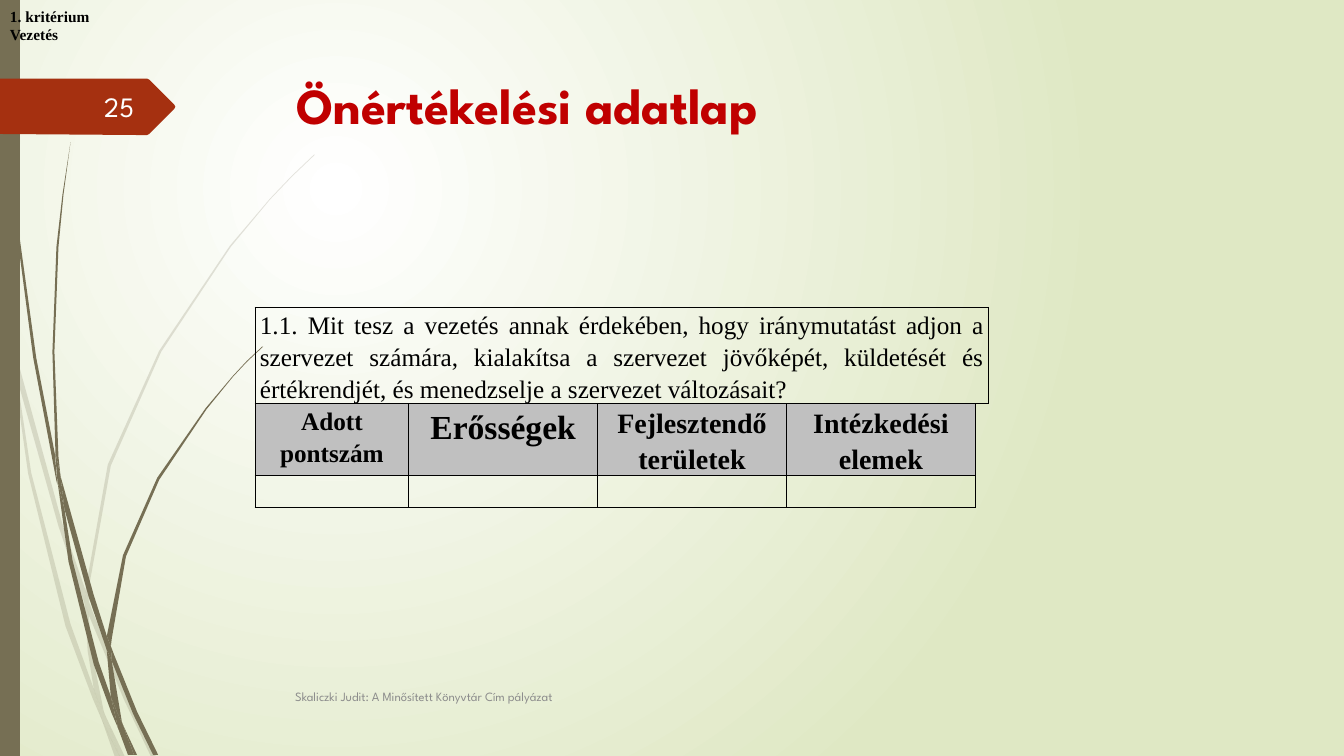
from lxml.etree import SubElement
from pptx import Presentation
from pptx.dml.color import RGBColor
from pptx.enum.text import MSO_ANCHOR, PP_ALIGN
from pptx.oxml.ns import qn
from pptx.util import Cm, Pt

# Content
TITLE = "Önértékelési adatlap"
CRITERION = ["1. kritérium", "Vezetés"]
FOOTER = "Skaliczki Judit: A Minősített Könyvtár Cím pályázat"
PAGE = "25"
QUESTION = ("1.1. Mit tesz a vezetés annak érdekében, hogy iránymutatást adjon a "
            "szervezet számára, kialakítsa a szervezet jövőképét, küldetését és "
            "értékrendjét, és menedzselje a szervezet változásait?")
HEADERS = [("Adott pontszám", 18), ("Erősségek", 24),
           ("Fejlesztendő területek", 20), ("Intézkedési elemek", 20)]
COLS = [3.87, 4.76, 4.76, 4.76, 0.31]
ROWS = [2.42, 1.81, 0.81]

# Outlines, in hundredths of an inch
UNIT = Cm(0.0254)
PALE_WISPS = [
    [(11, 350), (9, 322), (0, 282), (0, 299), (10, 344)],
    [(58, 522), (84, 599), (85, 586), (62, 520), (14, 345), (17, 376)],
    [(92, 607), (88, 596), (88, 610), (123, 694), (150, 751), (155, 751), (127, 692)],
    [(119, 751), (124, 751), (105, 711)],
    [(93, 683), (70, 619), (31, 469), (17, 376), (11, 350), (28, 470), (65, 621),
     (92, 693), (101, 714), (99, 707)],
    [(84, 599), (87, 646), (93, 683), (96, 692), (105, 711), (103, 706), (91, 646),
     (88, 610), (88, 608)],
    [(88, 584), (110, 462), (160, 349), (229, 245), (268, 198), (290, 175), (312, 154),
     (312, 153), (289, 175), (268, 197), (228, 244), (158, 348), (107, 461), (85, 584),
     (85, 586), (88, 596)],
    [(101, 714), (114, 751), (119, 751)],
    [(88, 608), (88, 610), (88, 596), (85, 586), (84, 599)],
    [(96, 692), (93, 683), (99, 707), (101, 714), (119, 751), (105, 711)],
]
DARK_WISPS = [
    [(7, 110), (17, 233), (33, 355), (56, 477), (57, 481), (55, 457), (55, 453),
     (36, 355), (19, 232), (8, 109), (5, 48), (4, 0), (3, 0), (4, 48)],
    [(88, 592), (106, 645), (106, 633), (106, 631), (93, 590), (60, 472), (64, 505)],
    [(113, 649), (110, 641), (111, 656), (132, 708), (152, 749), (157, 749), (136, 706)],
    [(110, 691), (98, 657), (72, 556), (64, 505), (57, 477), (68, 557), (93, 659),
     (111, 708), (117, 722), (116, 717)],
    [(60, 472), (58, 453), (54, 349), (58, 245), (63, 193), (70, 141), (62, 193),
     (56, 245), (52, 349), (55, 449)],
    [(133, 749), (136, 749), (122, 719)],
    [(57, 477), (64, 505), (60, 472), (55, 449), (55, 453)],
    [(111, 633), (125, 552), (158, 476), (205, 406), (231, 374), (245, 359), (261, 344),
     (260, 344), (245, 358), (231, 373), (204, 405), (156, 474), (122, 551), (106, 631),
     (110, 641)],
    [(117, 722), (127, 749), (131, 749)],
    [(106, 645), (110, 691), (116, 706), (122, 719), (121, 716), (111, 656), (109, 651)],
    [(106, 645), (109, 651), (111, 656), (110, 641), (106, 631), (106, 633)],
    [(116, 706), (110, 691), (116, 717), (117, 722), (130, 749), (133, 749), (122, 719)],
]
SIDE_BAR = [(0, 0), (20, 0), (20, 750), (0, 750)]
PAGE_TAG = [(0, 78), (146, 78), (148, 79), (173, 104), (174, 106), (173, 108),
            (148, 133), (146, 134), (136, 134), (0, 133)]

THEME = {
    "sans": "League Spartan", "serif": "Times New Roman",
    "glow": "FFFFFF", "edge": "DFE8C4", "olive": "766F54", "rust": "A53010",
    "title": "C00000", "ink": "000000", "grey": "8C8C8C", "light": "FEFFFF",
    "header": "C0C0C0",
    "title_pt": 36, "body_pt": 18, "page_pt": 20, "footer_pt": 9, "criterion_pt": 11,
}


def color(name):
    return RGBColor.from_string(THEME[name])


def write(tf, lines, size, ink="ink", font="serif", bold=False,
          align=PP_ALIGN.LEFT, anchor=MSO_ANCHOR.MIDDLE, spacing=None):
    tf.word_wrap = True
    tf.vertical_anchor = anchor
    for i, line in enumerate(lines):
        p = tf.paragraphs[0] if i == 0 else tf.add_paragraph()
        p.alignment = align
        if spacing:
            p.line_spacing = spacing
        r = p.add_run()
        r.text = line
        r.font.size, r.font.bold, r.font.name = Pt(size), bold, THEME[font]
        r.font.color.rgb = color(ink)


def outline(shapes, points, fill, opacity=100):
    pen = shapes.build_freeform(*points[0], scale=UNIT)
    pen.add_line_segments(points[1:], close=True)
    sp = pen.convert_to_shape()
    sp.shadow.inherit = False
    sp.line.fill.background()
    sp.fill.solid()
    sp.fill.fore_color.rgb = color(fill)
    if opacity < 100:
        rgb = sp.fill._xPr.find(".//" + qn("a:srgbClr"))
        SubElement(rgb, qn("a:alpha"), val=str(opacity * 1000))


def borders(cell, sides):
    tcPr = cell._tc.get_or_add_tcPr()
    for i, side in enumerate("LRTB"):
        drawn = side in sides
        ln = tcPr.makeelement(qn("a:ln" + side), {"w": str(Pt(1) if drawn else 0)})
        tcPr.insert(i, ln)
        fill = SubElement(ln, qn("a:solidFill" if drawn else "a:noFill"))
        if drawn:
            SubElement(fill, qn("a:srgbClr"), val=THEME["ink"])


def background(slide):
    fill = slide.background.fill
    fill.gradient()
    for stop, name, pos in zip(fill.gradient_stops, ("glow", "edge"), (0, 1)):
        stop.color.rgb = color(name)
        stop.position = pos
    grad = slide.background._cSld.find(".//" + qn("a:gradFill"))
    grad.remove(grad.find(qn("a:lin")))
    circle = SubElement(grad, qn("a:path"), {"path": "circle"})
    SubElement(circle, qn("a:fillToRect"), l="50000", t="50000", r="100000", b="100000")


def text_box(slide, box, lines, size, **fmt):
    sp = slide.shapes.add_textbox(*map(Cm, box))
    write(sp.text_frame, lines, size, **fmt)


def assessment_table(slide):
    frame = slide.shapes.add_table(len(ROWS), len(COLS), Cm(6.43), Cm(7.75),
                                   Cm(sum(COLS)), Cm(sum(ROWS)))
    table = frame.table
    table.first_row = table.horz_banding = False
    for col, width in zip(table.columns, COLS):
        col.width = Cm(width)
    for row, height in zip(table.rows, ROWS):
        row.height = Cm(height)
    table.cell(0, 0).merge(table.cell(0, len(COLS) - 1))
    last = len(COLS) - 1
    for i in range(len(ROWS)):
        for j in range(len(COLS)):
            cell = table.cell(i, j)
            cell.margin_left = cell.margin_right = Cm(0.12)
            cell.margin_top = cell.margin_bottom = 0
            if i == 1 and j < last:
                cell.fill.solid()
                cell.fill.fore_color.rgb = color("header")
            else:
                cell.fill.background()
            borders(cell, "LRTB" if i == 0 or j < last else "LT" if i == 1 else "L")
    write(table.cell(0, 0).text_frame, [QUESTION], THEME["body_pt"],
          align=PP_ALIGN.JUSTIFY, anchor=MSO_ANCHOR.TOP, spacing=1.15)
    for j, (label, size) in enumerate(HEADERS):
        write(table.cell(1, j).text_frame, [label], size, bold=True,
              align=PP_ALIGN.CENTER, anchor=MSO_ANCHOR.TOP, spacing=1.15)


def main():
    prs = Presentation()
    prs.slide_width, prs.slide_height = Cm(33.87), Cm(19.05)
    slide = prs.slides.add_slide(prs.slide_layouts[5])
    background(slide)

    # Decoration on the left
    for wisps, opacity in ((PALE_WISPS, 20), (DARK_WISPS, 100)):
        group = slide.shapes.add_group_shape()
        for points in wisps:
            outline(group.shapes, points, "olive", opacity)
    outline(slide.shapes, SIDE_BAR, "olive")
    outline(slide.shapes, PAGE_TAG, "rust")

    # Title
    title = slide.shapes.title
    title.left, title.top, title.width, title.height = map(Cm, (7.21, 1.73, 24.77, 3.56))
    write(title.text_frame, [TITLE], THEME["title_pt"], ink="title", font="sans",
          bold=True, anchor=MSO_ANCHOR.TOP)

    # Table and small texts
    assessment_table(slide)
    text_box(slide, (7.19, 17.04, 21.16, 1.02), [FOOTER], THEME["footer_pt"],
             ink="grey", font="sans")
    text_box(slide, (1.47, 2.18, 2.16, 1.02), [PAGE], THEME["page_pt"],
             ink="light", font="sans", align=PP_ALIGN.RIGHT)
    text_box(slide, (0, 0, 33.87, 1.27), CRITERION, THEME["criterion_pt"],
             bold=True, align=PP_ALIGN.JUSTIFY)
    prs.save("out.pptx")


if __name__ == "__main__":
    main()
